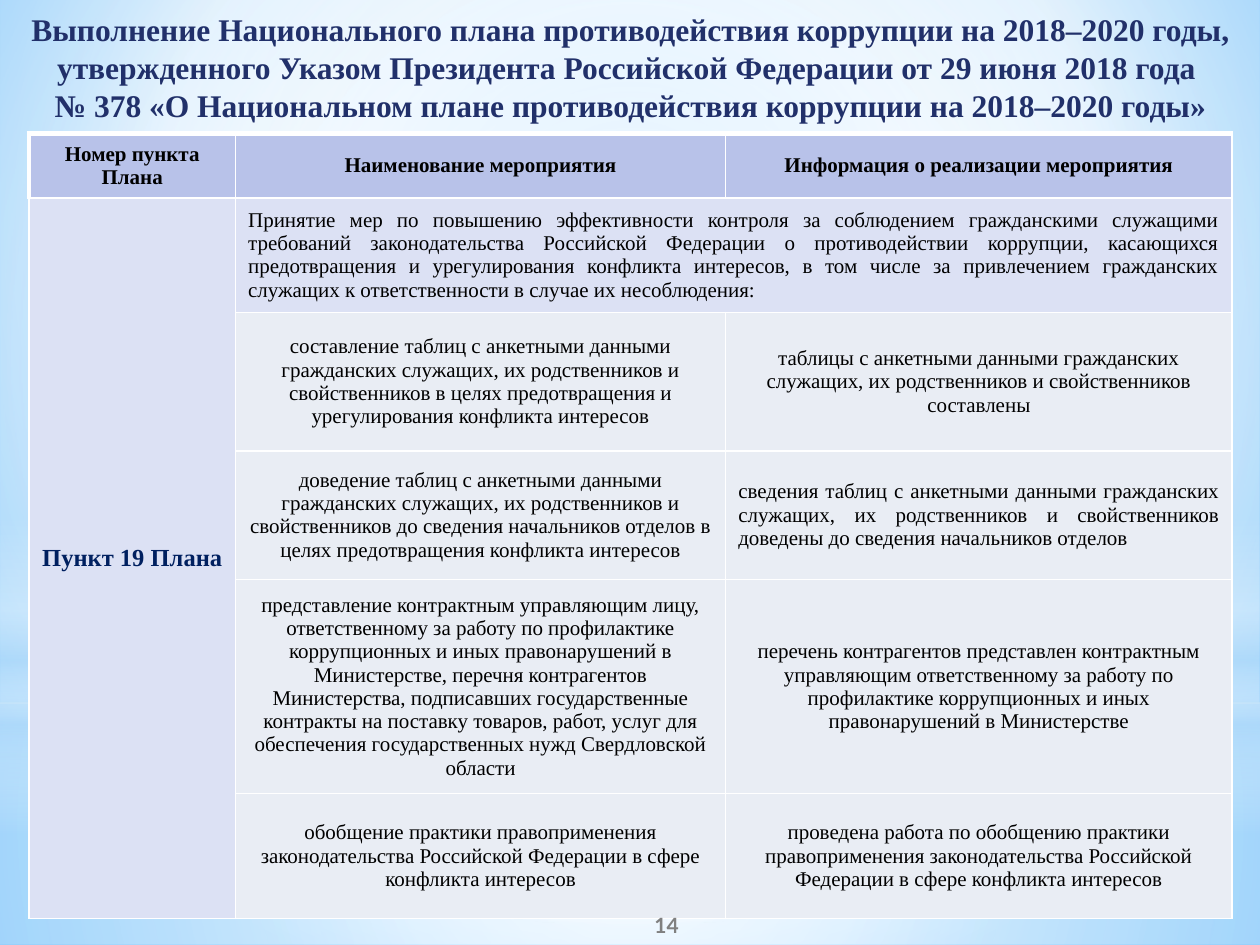
import pptx
import pptx.dml.color
import pptx.enum.shapes
import pptx.enum.text
import pptx.oxml.ns
import pptx.util
from lxml import etree

Inches = pptx.util.Inches
Align = pptx.enum.text.PP_ALIGN
Anchor = pptx.enum.text.MSO_ANCHOR
Shape = pptx.enum.shapes.MSO_SHAPE
qn = pptx.oxml.ns.qn

ACTIVITIES = [
    ("составление таблиц с анкетными данными гражданских служащих, их родственников и свойственников "
     "в целях предотвращения и урегулирования конфликта интересов",
     "таблицы с анкетными данными гражданских служащих, их родственников и свойственников составлены",
     Align.CENTER),
    ("доведение таблиц с анкетными данными гражданских служащих, их родственников и свойственников "
     "до сведения начальников отделов в целях предотвращения конфликта интересов",
     "сведения таблиц с анкетными данными гражданских служащих, их родственников и свойственников "
     "доведены до сведения начальников отделов",
     Align.JUSTIFY),
    ("представление контрактным управляющим лицу, ответственному за работу по профилактике "
     "коррупционных и иных правонарушений в Министерстве, перечня контрагентов Министерства, "
     "подписавших государственные контракты на поставку товаров, работ, услуг для обеспечения "
     "государственных нужд Свердловской области",
     "перечень контрагентов представлен контрактным управляющим ответственному за работу "
     "по профилактике коррупционных и иных правонарушений в Министерстве",
     Align.CENTER),
    ("обобщение практики правоприменения законодательства Российской Федерации в сфере конфликта интересов",
     "проведена работа по обобщению практики правоприменения законодательства Российской Федерации "
     "в сфере конфликта интересов",
     Align.CENTER),
]


def color(code):
    return pptx.dml.color.RGBColor.from_string(code)


class PlanSlide:
    """Holds the slide with its text style and draws each kind of element."""

    font = "Times New Roman"
    border = "FFFFFF"
    header, band, body = "B8C2E9", "DCE1F4", "E9EDF4"

    def __init__(self, deck):
        self.page = deck.slides.add_slide(deck.slide_layouts[6])

    def gradient(self, fill, element, stops, center=None):
        fill.gradient()
        node = next(element.iter(qn("a:gradFill")))
        for child in list(node):
            node.remove(child)
        stop_list = etree.SubElement(node, qn("a:gsLst"))
        for position, code, opacity in stops:
            stop = etree.SubElement(stop_list, qn("a:gs"), pos=str(position * 1000))
            tint = etree.SubElement(stop, qn("a:srgbClr"), val=code)
            if opacity < 100:
                etree.SubElement(tint, qn("a:alpha"), val=str(opacity * 1000))
        if center:
            circle = etree.SubElement(node, qn("a:path"), {"path": "circle"})
            sides = {side: str(value * 1000) for side, value in zip("ltrb", center)}
            etree.SubElement(circle, qn("a:fillToRect"), sides)
        else:
            etree.SubElement(node, qn("a:lin"), ang="5400000", scaled="0")

    def background(self, stops, center):
        self.gradient(self.page.background.fill, self.page.element, stops, center)

    def glow(self, kind, top, height, stops, center=(50, 50, 50, 50)):
        shape = self.page.shapes.add_shape(kind, 0, Inches(top), Inches(10), Inches(height))
        shape.shadow.inherit = False
        shape.line.fill.background()
        self.gradient(shape.fill, shape.element, stops, center)

    def set_text(self, frame, text, size, code, bold, align=Align.CENTER, font=None):
        frame.word_wrap = True
        para = frame.paragraphs[0]
        para.text = text
        para.alignment = align
        para.font.name = font or self.font
        para.font.size = pptx.util.Pt(size)
        para.font.bold = bold
        para.font.color.rgb = color(code)

    def text(self, left, top, width, height, text, size, code, anchor=Anchor.TOP, font=None):
        box = self.page.shapes.add_textbox(*map(Inches, (left, top, width, height)))
        box.text_frame.vertical_anchor = anchor
        self.set_text(box.text_frame, text, size, code, True, font=font)
        return box

    def table(self, left, top, height, columns, rows):
        frame = self.page.shapes.add_table(
            len(rows), len(columns), Inches(left), Inches(top), Inches(sum(columns)), Inches(height))
        grid = frame.table
        grid.first_row = grid.horz_banding = False
        for column, width in zip(grid.columns, columns):
            column.width = Inches(width)
        for row, row_height in zip(grid.rows, rows):
            row.height = Inches(row_height)
        frame.height = Inches(height)
        return grid

    def cell(self, cell, fill, left=1, top=1):
        cell.vertical_anchor = Anchor.MIDDLE
        cell.fill.solid()
        cell.fill.fore_color.rgb = color(fill)
        properties = cell._tc.get_or_add_tcPr()
        for index, (side, width) in enumerate(zip("LRTB", (left, 1, top, 1))):
            line = etree.Element(qn("a:ln" + side), w=str(pptx.util.Pt(width)))
            solid = etree.SubElement(line, qn("a:solidFill"))
            etree.SubElement(solid, qn("a:srgbClr"), val=self.border)
            properties.insert(index, line)


def main():
    deck = pptx.Presentation()
    deck.slide_width, deck.slide_height = Inches(10), Inches(7.5)
    slide = PlanSlide(deck)

    slide.background([(0, "9ED5FF", 100), (60, "FFFFFF", 100), (100, "5BB9FF", 100)], (20, 10, 20, 60))
    slide.glow(Shape.RECTANGLE, 5.58, 1.92, [(0, "FFFFFF", 91), (37, "FFFFFF", 76), (100, "B4DCFA", 79)])
    slide.glow(Shape.RECTANGLE, 0, 5.58, [(0, "FFFFFF", 89), (48, "FFFFFF", 62), (100, "B4DCFA", 79)])
    slide.glow(Shape.RECTANGLE, 4.12, 2.5, [
        (0, "FFFFFF", 0), (29, "FFFFFF", 30), (45, "B4DCFA", 40),
        (55, "FFFFFF", 26), (65, "B4DCFA", 60), (100, "FFFFFF", 0)], None)
    slide.glow(Shape.OVAL, 1.75, 5.58, [(0, "FFFFFF", 100), (56, "FFFFFF", 0)])

    title = slide.text(
        0.01, 0.03, 9.99, 1.01,
        "Выполнение Национального плана противодействия коррупции на 2018–2020 годы, "
        "утвержденного Указом Президента Российской Федерации от 29 июня 2018 года \n"
        "№ 378 «О Национальном плане противодействия коррупции на 2018–2020 годы»", 18, "21306A")
    title.text_frame.auto_size = pptx.enum.text.MSO_AUTO_SIZE.SHAPE_TO_FIT_TEXT

    grid = slide.table(0.23, 1.06, 6.23, [1.64, 3.89, 4.02], [0.51, 0.91, 1.1, 1.02, 1.35, 0.99])
    for row in range(6):
        for column in range(3):
            if row == 0:
                slide.cell(grid.cell(row, column), slide.header, left=1 if column else 3, top=3)
            else:
                slide.cell(grid.cell(row, column), slide.band if row == 1 or column == 0 else slide.body)
    grid.cell(1, 0).merge(grid.cell(5, 0))
    grid.cell(1, 1).merge(grid.cell(1, 2))

    headings = ["Номер пункта Плана", "Наименование мероприятия", "Информация о реализации мероприятия"]
    for column, heading in enumerate(headings):
        slide.set_text(grid.cell(0, column).text_frame, heading, 12, "000000", True)
    slide.set_text(grid.cell(1, 0).text_frame, "Пункт 19 Плана", 14, "002060", True)
    slide.set_text(
        grid.cell(1, 1).text_frame,
        "Принятие мер по повышению эффективности контроля за соблюдением гражданскими служащими "
        "требований законодательства Российской Федерации о противодействии коррупции, касающихся "
        "предотвращения и урегулирования конфликта интересов, в том числе за привлечением гражданских "
        "служащих к ответственности в случае их несоблюдения:", 12, "000000", False, Align.JUSTIFY)
    for row, (activity, result, align) in enumerate(ACTIVITIES, start=2):
        slide.set_text(grid.cell(row, 1).text_frame, activity, 12, "000000", False)
        slide.set_text(grid.cell(row, 2).text_frame, result, 12, "000000", False, align)

    slide.text(4.29, 7.14, 2, 0.4, "14", 12, "808080", Anchor.MIDDLE, "Lato")
    deck.save("out.pptx")


if __name__ == "__main__":
    main()
